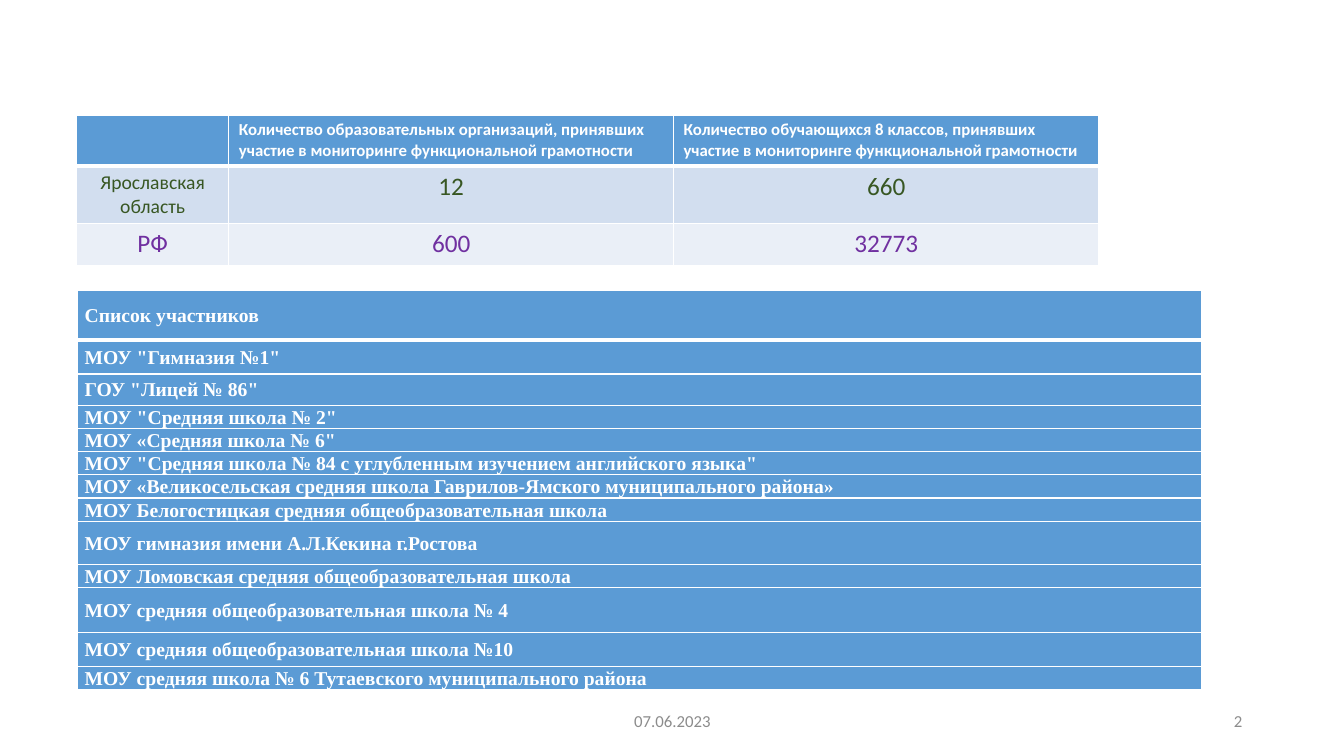
"""Build the slide on taking part in the functional literacy survey."""
from lxml import etree
from pptx import Presentation
from pptx import util as u
from pptx.dml.color import RGBColor
from pptx.enum import text
from pptx.oxml import ns

HUES = {"blue": "5B9BD5", "pale": "D2DEEF", "light": "EAEFF7", "white": "FFFFFF",
        "green": "385723", "violet": "7030A0", "gray": "8C8C8C"}
SANS, SERIF = "Calibri", "Times New Roman"
LEFT, MID, RIGHT = text.PP_ALIGN.LEFT, text.PP_ALIGN.CENTER, text.PP_ALIGN.RIGHT

COUNTS = [
    ("", "Количество образовательных организаций, принявших участие в мониторинге функциональной грамотности",
     "Количество обучающихся 8 классов, принявших участие в мониторинге функциональной грамотности"),
    ("Ярославская область", "12", "660"),
    ("РФ", "600", "32773"),
]
LOOKS = [("blue", "white", (12, 12, 12), LEFT),
         ("pale", "green", (14, 18, 18), MID),
         ("light", "violet", (18, 18, 18), MID)]
LOW = 0.2
SCHOOLS = [
    ("Список участников", 0.49),
    ('МОУ "Гимназия №1"', 0.34),
    ('ГОУ "Лицей № 86"', 0.31),
    ('МОУ "Средняя школа № 2"', 0.22),
    ('МОУ «Средняя школа № 6"', LOW),
    ('МОУ "Средняя школа № 84 с углубленным изучением английского языка"', LOW),
    ("МОУ «Великосельская средняя школа Гаврилов-Ямского муниципального района»", LOW),
    ("МОУ Белогостицкая средняя общеобразовательная школа", LOW),
    ("МОУ гимназия имени А.Л.Кекина г.Ростова", 0.43),
    ("МОУ Ломовская средняя общеобразовательная школа", LOW),
    ("МОУ средняя общеобразовательная школа № 4", 0.44),
    ("МОУ средняя общеобразовательная школа №10", 0.34),
    ("МОУ средняя школа № 6 Тутаевского муниципального района", LOW),
]
FOOT = [("07.06.2023", 4.42, 4.5, MID), ("2", 9.42, 3, RIGHT)]


def write(frame, words, size, hue, align, font=SANS, bold=False):
    para = frame.paragraphs[0]
    para.alignment = align
    if words:
        run = para.add_run()
        run.text = words
        run.font.size, run.font.name, run.font.bold = u.Pt(size), font, bold
        run.font.color.rgb = RGBColor.from_string(HUES[hue])
    return para


def paint(cell, hue, top, base):
    cell.fill.solid()
    cell.fill.fore_color.rgb = RGBColor.from_string(HUES[hue])
    props = cell._tc.get_or_add_tcPr()
    for spot, (side, wide) in enumerate((("L", 1), ("R", 1), ("T", top), ("B", base))):
        line = etree.Element(ns.qn(f"a:ln{side}"), w=str(u.Pt(wide)))
        fill = etree.SubElement(line, ns.qn("a:solidFill"))
        etree.SubElement(fill, ns.qn("a:srgbClr"), val=HUES["white"])
        props.insert(spot, line)


def grid(slide, left, top, cols, rows):
    size = [u.Inches(n) for n in (left, top, sum(cols), sum(rows))]
    table = slide.shapes.add_table(len(rows), len(cols), *size).table
    table.horz_banding = False
    for col, wide in zip(table.columns, cols):
        col.width = u.Inches(wide)
    for row, high in zip(table.rows, rows):
        row.height = u.Inches(high)
    return table


def edges(row):
    return 3 if row == 1 else 1, 3 if row == 0 else 1


def main():
    deck = Presentation()
    deck.slide_width, deck.slide_height = u.Inches(13.33), u.Inches(7.5)
    slide = deck.slides.add_slide(deck.slide_layouts[6])

    table = grid(slide, 0.77, 2.88, [11.15], [high for _, high in SCHOOLS])
    for row, (name, _) in enumerate(SCHOOLS):
        cell = table.cell(row, 0)
        paint(cell, "blue", *edges(row))
        cell.margin_left = cell.margin_right = u.Inches(0.07)
        cell.margin_top = cell.margin_bottom = 0
        cell.vertical_anchor = text.MSO_ANCHOR.MIDDLE
        write(cell.text_frame, name, 14, "white", LEFT, SERIF, True).line_spacing = 1.07

    table = grid(slide, 0.76, 1.14, [1.51, 4.41, 4.22], [0.23, 0.5, 0.41])
    for row, (words, (fill, ink, sizes, align)) in enumerate(zip(COUNTS, LOOKS)):
        for col, (word, size) in enumerate(zip(words, sizes)):
            cell = table.cell(row, col)
            paint(cell, fill, *edges(row))
            write(cell.text_frame, word, size, ink, align, bold=row == 0)

    for word, left, wide, align in FOOT:
        box = slide.shapes.add_textbox(*[u.Inches(n) for n in (left, 6.95, wide, 0.4)])
        box.text_frame.word_wrap = True
        box.text_frame.vertical_anchor = text.MSO_ANCHOR.MIDDLE
        write(box.text_frame, word, 12, "gray", align)

    deck.save("out.pptx")


if __name__ == "__main__":
    main()
